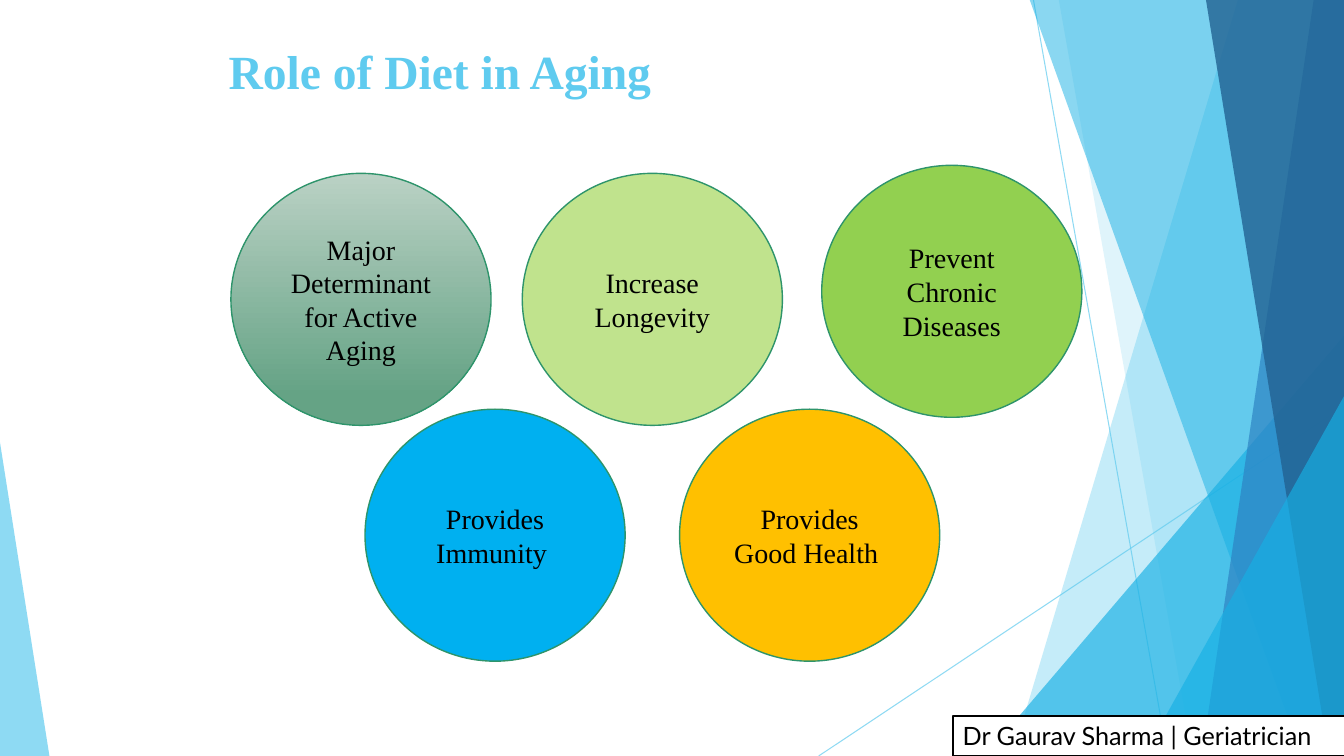
"""Build the "Role of Diet in Aging" slide: faceted backdrop, title, five circles and a footer."""
import dataclasses

import pptx
import pptx.dml.color
import pptx.enum.shapes
import pptx.enum.text
import pptx.oxml.ns
import pptx.util
from lxml import etree

Inches = pptx.util.Inches
Pt = pptx.util.Pt
RGB = pptx.dml.color.RGBColor.from_string
MSO_SHAPE = pptx.enum.shapes.MSO_SHAPE
qn = pptx.oxml.ns.qn


@dataclasses.dataclass(frozen=True)
class Theme:
    sky: str = "5FCBEF"
    cyan: str = "17B0E4"
    blue: str = "2E83C3"
    navy: str = "226292"
    rim: str = "2E946B"
    black: str = "000000"
    white: str = "FFFFFF"
    sage: tuple = ("BAD1C4", "65A385")
    light_green: str = "C0E38D"
    green: str = "92D050"
    azure: str = "00B0F0"
    amber: str = "FFC000"
    serif: str = "Times New Roman"
    sans: str = "Lato"
    title_size: int = 34
    circle_size: int = 20
    footer_size: int = 18


theme = Theme()


def tint(fill, color, opacity):
    """Set a solid colour with the given opacity in percent."""
    fill.solid()
    fill.fore_color.rgb = RGB(color)
    srgb = fill._xPr.find(".//" + qn("a:srgbClr"))
    etree.SubElement(srgb, qn("a:alpha"), val=str(opacity * 1000))


def write(shape, text, font_name, size, color):
    """Put one paragraph of text in a shape and return the paragraph."""
    paragraph = shape.text_frame.paragraphs[0]
    paragraph.text = text
    paragraph.font.name = font_name
    paragraph.font.size = Pt(size)
    paragraph.font.color.rgb = RGB(color)
    return paragraph


prs = pptx.Presentation()
prs.slide_width = Inches(13.33)
prs.slide_height = Inches(7.5)
slide = prs.slides.add_slide(prs.slide_layouts[6])
shapes = slide.shapes

for start_x, start_y, end_x in [(10.25, 0, 11.58), (13.33, 4.03, 8.12)]:
    ray = shapes.add_connector(
        pptx.enum.shapes.MSO_CONNECTOR.STRAIGHT,
        Inches(start_x), Inches(start_y), Inches(end_x), Inches(7.5))
    ray.line.width = Pt(0.75)
    tint(ray.line.fill, theme.sky, 70)
    etree.SubElement(ray._element.spPr, qn("a:effectLst"))

bands = [
    ("band", (12.28, 10.04), theme.sky, 36),
    ("band", (10.5, 11.83), theme.sky, 20),
    ("wedge", (9.77, 3.33, 3.56, 1), theme.cyan, 66),
    ("band", (10.21, 12.91), theme.cyan, 50),
    ("band", (13.03, 11.92), theme.blue, 70),
    ("band", (11.96, 13.18), theme.navy, 80),
    ("wedge", (11.34, 3.93, 1.99, 1), theme.cyan, 66),
    ("wedge", (0, 4.39, 0.49, 0), theme.sky, 70),
]
for kind, geometry, color, opacity in bands:
    if kind == "band":
        top_x, bottom_x = geometry
        outline = shapes.build_freeform(Inches(top_x), Inches(-0.01))
        outline.add_line_segments(
            [(Inches(x), Inches(y)) for x, y in
             [(13.33, -0.01), (13.33, 7.5), (bottom_x, 7.5)]], close=True)
        facet = outline.convert_to_shape()
    else:
        left, top, width, apex = geometry
        facet = shapes.add_shape(
            MSO_SHAPE.ISOSCELES_TRIANGLE,
            Inches(left), Inches(top), Inches(width), Inches(7.5 - top))
        facet.adjustments[0] = apex
    facet.shadow.inherit = False
    facet.line.fill.background()
    tint(facet.fill, color, opacity)

footer = shapes.add_shape(
    MSO_SHAPE.RECTANGLE, Inches(9.45), Inches(7.1), Inches(3.89), Inches(0.4))
footer.shadow.inherit = False
footer.fill.solid()
footer.fill.fore_color.rgb = RGB(theme.white)
footer.line.color.rgb = RGB(theme.black)
footer.line.width = Pt(1.5)
footer.text_frame.word_wrap = False
footer.text_frame.vertical_anchor = pptx.enum.text.MSO_ANCHOR.TOP
credit = write(footer, "Dr Gaurav Sharma | Geriatrician",
               theme.sans, theme.footer_size, theme.black)
credit.alignment = pptx.enum.text.PP_ALIGN.LEFT

title = shapes.add_textbox(Inches(2.17), Inches(0.3), Inches(9), Inches(0.79))
title.text_frame.word_wrap = True
title.text_frame.vertical_anchor = pptx.enum.text.MSO_ANCHOR.MIDDLE
heading = write(title, "Role of Diet in Aging",
                theme.serif, theme.title_size, theme.sky)
heading.font.bold = True

benefits = [
    (2.29, 1.72, theme.sage, "Major Determinant for Active Aging"),
    (5.18, 1.72, theme.light_green, "Increase Longevity"),
    (8.15, 1.64, theme.green, "Prevent Chronic Diseases"),
    (3.62, 4.06, theme.azure, "Provides Immunity "),
    (6.74, 4.06, theme.amber, "Provides Good Health "),
]
for left, top, color, benefit in benefits:
    circle = shapes.add_shape(
        MSO_SHAPE.OVAL, Inches(left), Inches(top), Inches(2.58), Inches(2.5))
    circle.shadow.inherit = False
    if color == theme.sage:
        circle.fill.gradient()
        circle.fill.gradient_angle = 270
        for stop, shade, position in zip(circle.fill.gradient_stops, color, (0, 0.88)):
            stop.color.rgb = RGB(shade)
            stop.position = position
    else:
        circle.fill.solid()
        circle.fill.fore_color.rgb = RGB(color)
    circle.line.color.rgb = RGB(theme.rim)
    circle.line.width = Pt(1)
    circle.text_frame.word_wrap = True
    circle.text_frame.vertical_anchor = pptx.enum.text.MSO_ANCHOR.MIDDLE
    label = write(circle, benefit, theme.serif, theme.circle_size, theme.black)
    label.alignment = pptx.enum.text.PP_ALIGN.CENTER

prs.save("out.pptx")
